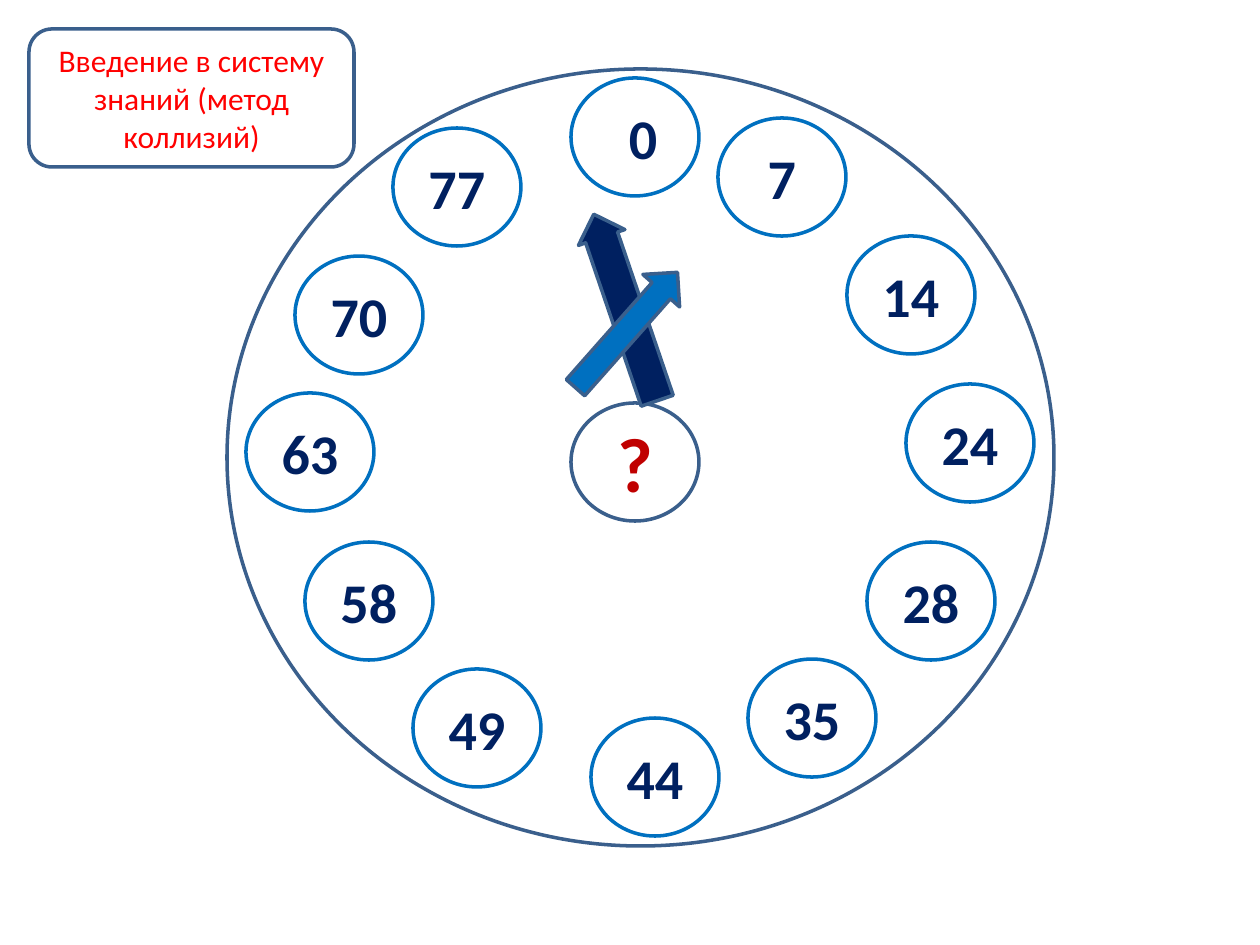
from pptx import Presentation
from pptx.dml.color import RGBColor
from pptx.enum.shapes import MSO_SHAPE as Shape
from pptx.enum.text import MSO_ANCHOR, MSO_AUTO_SIZE, PP_ALIGN
from pptx.util import Pt

PX = 914400 / 126

WHITE = RGBColor(0xFF, 0xFF, 0xFF)
STEEL = RGBColor(0x3A, 0x5F, 0x8C)
BLUE = RGBColor(0x00, 0x70, 0xC0)
NAVY = RGBColor(0x00, 0x20, 0x60)
DARK_RED = RGBColor(0xC0, 0x00, 0x00)
RED = RGBColor(0xFF, 0x00, 0x00)

# Content: lengths in px
HEADING = "Введение в систему знаний (метод коллизий)"
HEADING_BOX = (29, 29, 325, 138)
DIAL_BOX = (227, 69, 827, 777)
CIRCLE_SIZE = (128, 118)
# number, left, top, clockwise from twelve o'clock
HOURS = [
    ("0", 571, 78), ("7", 718, 118), ("14", 847, 236), ("24", 906, 384),
    ("28", 867, 542), ("35", 748, 659), ("44", 591, 718), ("49", 413, 669),
    ("58", 305, 542), ("63", 246, 393), ("70", 295, 256), ("77", 393, 128),
]
CENTRE = ("?", 571, 403)
# box, rotation, shaft width, fill
HANDS = [
    ((601, 209, 49, 197), 341.2, 0.69, NAVY),
    ((602, 253, 49, 154), 41.5, 0.5, BLUE),
]
HEADING_FONT = {"name": "Calibri", "size": Pt(18), "bold": False}
HOUR_FONT = {"name": "Calibri", "size": Pt(32), "bold": True}
CENTRE_FONT = {"name": "Calibri", "size": Pt(44), "bold": True}


def emu(px):
    return round(px * PX)


def add_outlined(slide, kind, box, line, fill=WHITE):
    shape = slide.shapes.add_shape(kind, *map(emu, box))
    shape.shadow.inherit = False
    shape.fill.solid()
    shape.fill.fore_color.rgb = fill
    shape.line.color.rgb = line
    shape.line.width = Pt(2)
    return shape


def write(shape, text, font, color, left=13, right=13):
    frame = shape.text_frame
    frame.text = text
    layout = {"word_wrap": True, "auto_size": MSO_AUTO_SIZE.NONE,
              "vertical_anchor": MSO_ANCHOR.MIDDLE,
              "margin_left": emu(left), "margin_right": emu(right)}
    for name, value in layout.items():
        setattr(frame, name, value)
    paragraph = frame.paragraphs[0]
    paragraph.alignment = PP_ALIGN.CENTER
    run_font = paragraph.runs[0].font
    for name, value in font.items():
        setattr(run_font, name, value)
    run_font.color.rgb = color


def main():
    deck = Presentation()
    deck.slide_width, deck.slide_height = emu(1260), emu(945)
    slide = deck.slides.add_slide(deck.slide_layouts[5])

    # Clock face
    add_outlined(slide, Shape.OVAL, DIAL_BOX, STEEL)
    for number, left, top in HOURS:
        hour = add_outlined(slide, Shape.OVAL, (left, top, *CIRCLE_SIZE), BLUE)
        # The zero sits slightly right of its circle's middle
        inset = 29 if number == "0" else 13
        write(hour, number, HOUR_FONT, NAVY, left=inset)

    # Centre and hands
    mark, left, top = CENTRE
    centre = add_outlined(slide, Shape.OVAL, (left, top, *CIRCLE_SIZE), STEEL)
    write(centre, mark, CENTRE_FONT, DARK_RED)
    for box, rotation, shaft, fill in HANDS:
        hand = add_outlined(slide, Shape.UP_ARROW, box, STEEL, fill)
        hand.rotation = rotation
        hand.adjustments[0] = shaft

    # Heading, brought in front of its rounded frame
    add_outlined(slide, Shape.ROUNDED_RECTANGLE, HEADING_BOX, STEEL)
    heading = slide.shapes.title
    for name, value in zip(("left", "top", "width", "height"), HEADING_BOX):
        setattr(heading, name, emu(value))
    write(heading, HEADING, HEADING_FONT, RED, left=19, right=19)
    slide.shapes.element.append(heading.element)

    deck.save("out.pptx")


if __name__ == "__main__":
    main()
